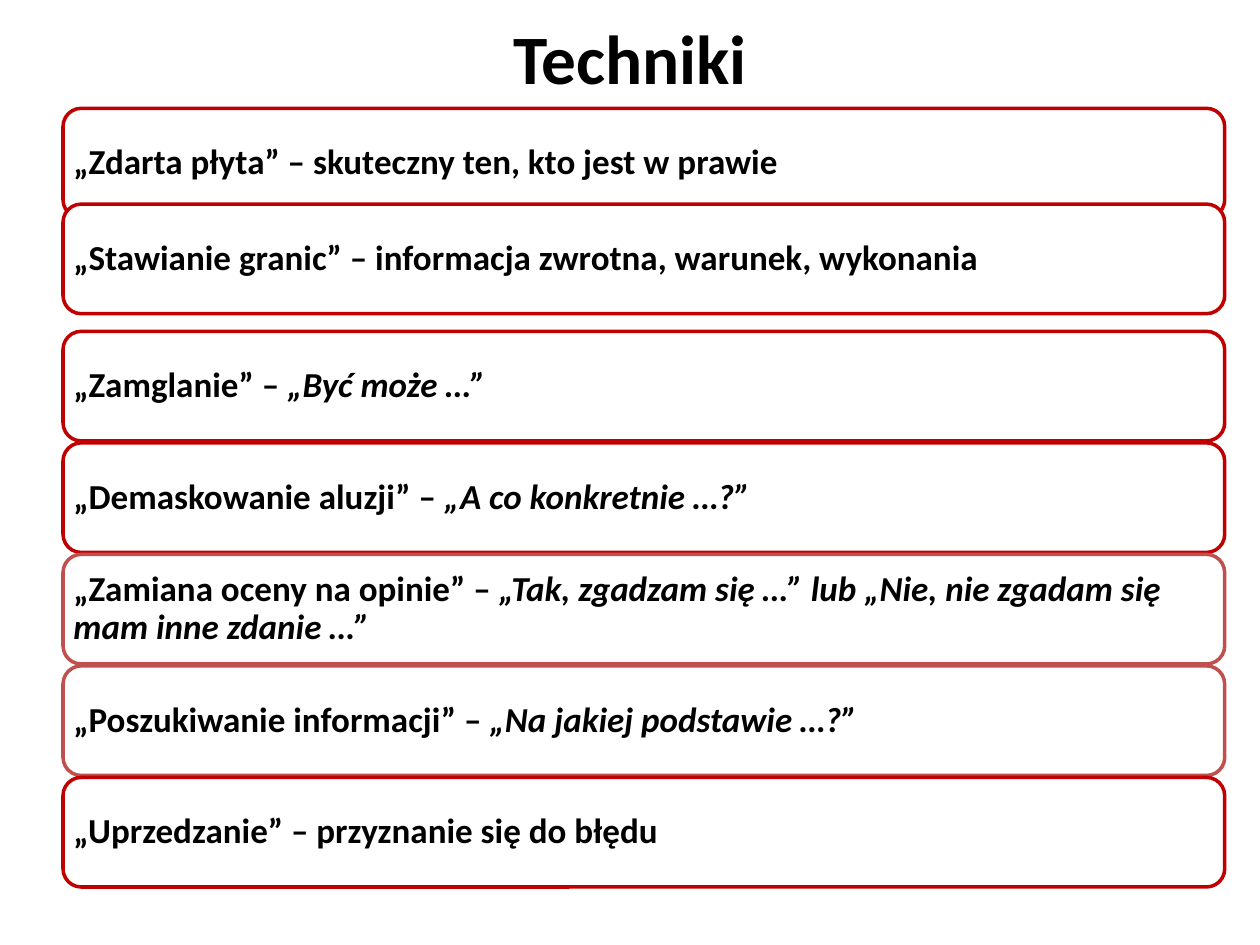
"""Builds a slide that lists assertiveness techniques in rounded bars."""
import dataclasses

import pptx
import pptx.dml.color
import pptx.enum.shapes
import pptx.enum.text
import pptx.util

Inches = pptx.util.Inches


@dataclasses.dataclass(frozen=True)
class Theme:
    """Colours, font and type sizes of the slide."""
    font: str = "Calibri"
    text: str = "000000"
    fill: str = "FFFFFF"
    strong: str = "C00000"
    soft: str = "C0504D"
    title_size: float = 39.6
    bar_size: float = 20
    line_width: float = 2


THEME = Theme()
BAR_LEFT, BAR_WIDTH, BAR_HEIGHT = 0.5, 9.22, 0.87
EVEN_START, EVEN_STEP = 2.63, 0.885
BAR_TOPS = [0.86, 1.62] + [EVEN_START + EVEN_STEP * i for i in range(5)]
TECHNIQUES = [
    ("„Zdarta płyta” – skuteczny ten, kto jest w prawie", "", THEME.strong),
    ("„Stawianie granic” – informacja zwrotna, warunek, wykonania", "", THEME.strong),
    ("„Zamglanie” – ", "„Być może …”", THEME.strong),
    ("„Demaskowanie aluzji” – ", "„A co konkretnie …?”", THEME.strong),
    ("„Zamiana oceny na opinie” – ",
     "„Tak, zgadzam się …” lub „Nie, nie zgadam się mam inne zdanie …”", THEME.soft),
    ("„Poszukiwanie informacji” – ", "„Na jakiej podstawie …?”", THEME.soft),
    ("„Uprzedzanie” – przyznanie się do błędu", "", THEME.strong),
]


def colour(value):
    """Return a hex string as an RGB colour."""
    return pptx.dml.color.RGBColor.from_string(value)


def add_span(para, text, size, italic=False):
    """Add a bold run in the theme font to a paragraph."""
    span = para.add_run()
    span.text = text
    span.font.name = THEME.font
    span.font.size = pptx.util.Pt(size)
    span.font.bold = True
    span.font.italic = italic
    span.font.color.rgb = colour(THEME.text)


def add_title(page, text):
    """Add the centred slide title."""
    box = page.shapes.add_textbox(Inches(0.5), Inches(0.3), Inches(9), Inches(0.3))
    frame = box.text_frame
    frame.word_wrap = True
    frame.vertical_anchor = pptx.enum.text.MSO_ANCHOR.MIDDLE
    para = frame.paragraphs[0]
    para.alignment = pptx.enum.text.PP_ALIGN.CENTER
    add_span(para, text, THEME.title_size)


def add_bar(page, top, name, quote, outline):
    """Add a rounded bar with a technique and its optional quote."""
    bar = page.shapes.add_shape(
        pptx.enum.shapes.MSO_SHAPE.ROUNDED_RECTANGLE,
        Inches(BAR_LEFT), Inches(top), Inches(BAR_WIDTH), Inches(BAR_HEIGHT))
    bar.shadow.inherit = False
    bar.fill.solid()
    bar.fill.fore_color.rgb = colour(THEME.fill)
    bar.line.color.rgb = colour(outline)
    bar.line.width = pptx.util.Pt(THEME.line_width)
    frame = bar.text_frame
    frame.word_wrap = True
    frame.vertical_anchor = pptx.enum.text.MSO_ANCHOR.MIDDLE
    frame.margin_left = frame.margin_right = Inches(0.04)
    frame.margin_top = frame.margin_bottom = Inches(0.04)
    para = frame.paragraphs[0]
    para.alignment = pptx.enum.text.PP_ALIGN.LEFT
    para.line_spacing = 0.9
    add_span(para, name, THEME.bar_size)
    if quote:
        add_span(para, quote, THEME.bar_size, italic=True)


def main():
    """Build the deck and save it."""
    deck = pptx.Presentation()
    deck.slide_width, deck.slide_height = Inches(10), Inches(7.5)
    page = deck.slides.add_slide(deck.slide_layouts[6])
    add_title(page, "Techniki")
    for top, (name, quote, outline) in zip(BAR_TOPS, TECHNIQUES):
        add_bar(page, top, name, quote, outline)
    deck.save("out.pptx")


if __name__ == "__main__":
    main()
